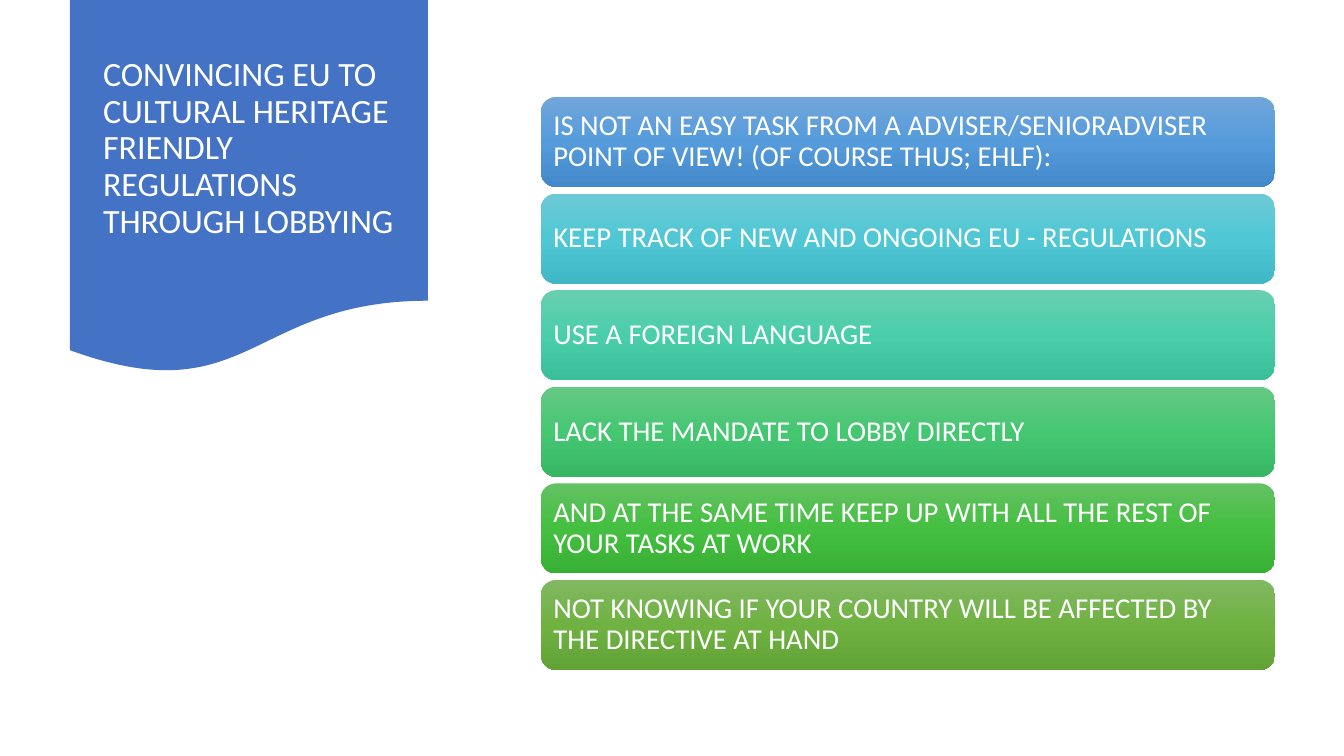
import copy

import pptx
import pptx.dml.color
import pptx.enum.shapes
import pptx.enum.text
import pptx.oxml.ns
import pptx.util

RGBColor = pptx.dml.color.RGBColor
SHAPES = pptx.enum.shapes.MSO_SHAPE

EMU_PER_PX = 914400 / 115
SLIDE_WIDTH, SLIDE_HEIGHT = 1344, 756
FONT = "Calibri"
WHITE = RGBColor(0xFF, 0xFF, 0xFF)
BANNER_BLUE = RGBColor(0x44, 0x72, 0xC4)

TITLE = "CONVINCING EU TO CULTURAL HERITAGE FRIENDLY REGULATIONS THROUGH LOBBYING"

# Text of each bar with its top, middle and bottom colours
CHALLENGES = [
    ("IS NOT AN EASY TASK FROM A ADVISER/SENIORADVISER POINT OF VIEW! (OF COURSE THUS; EHLF):",
     (RGBColor(0x71, 0xA6, 0xDB), RGBColor(0x55, 0x9B, 0xDB), RGBColor(0x44, 0x8A, 0xCA))),
    ("KEEP TRACK OF NEW AND ONGOING EU - REGULATIONS",
     (RGBColor(0x6D, 0xCA, 0xD5), RGBColor(0x4F, 0xC7, 0xD5), RGBColor(0x3F, 0xB7, 0xC4))),
    ("USE A FOREIGN LANGUAGE",
     (RGBColor(0x69, 0xCF, 0xB1), RGBColor(0x4A, 0xCE, 0xAA), RGBColor(0x3B, 0xBE, 0x9A))),
    ("LACK THE MANDATE TO LOBBY DIRECTLY",
     (RGBColor(0x66, 0xC8, 0x85), RGBColor(0x45, 0xC7, 0x72), RGBColor(0x37, 0xB7, 0x64))),
    ("AND AT THE SAME TIME KEEP UP WITH ALL THE REST OF YOUR TASKS AT WORK",
     (RGBColor(0x64, 0xC1, 0x62), RGBColor(0x44, 0xBF, 0x41), RGBColor(0x37, 0xB0, 0x34))),
    ("NOT KNOWING IF YOUR COUNTRY WILL BE AFFECTED BY THE DIRECTIVE AT HAND",
     (RGBColor(0x81, 0xB8, 0x61), RGBColor(0x6F, 0xB2, 0x42), RGBColor(0x62, 0xA3, 0x36))),
]


def px(length):
    return pptx.util.Emu(round(length * EMU_PER_PX))


def add_text_shape(slide, preset, box, text, size, insets):
    """Add an outline-free shape with left-aligned white text; insets are left, top, right, bottom."""
    shape = slide.shapes.add_shape(preset, *map(px, box))
    shape.shadow.inherit = False
    shape.line.fill.background()
    frame = shape.text_frame
    frame.word_wrap = True
    frame.vertical_anchor = pptx.enum.text.MSO_ANCHOR.MIDDLE
    frame.margin_left, frame.margin_top, frame.margin_right, frame.margin_bottom = map(px, insets)
    paragraph = frame.paragraphs[0]
    paragraph.text = text
    paragraph.alignment = pptx.enum.text.PP_ALIGN.LEFT
    paragraph.line_spacing = 0.9
    paragraph.font.name = FONT
    paragraph.font.size = pptx.util.Pt(size)
    paragraph.font.color.rgb = WHITE
    return shape


def fill_downwards(shape, colours):
    """Fill the shape with a top-to-bottom gradient of three colours."""
    shape.fill.gradient()
    shape.fill.gradient_angle = 270
    stop_list = shape._element.spPr.find(".//" + pptx.oxml.ns.qn("a:gsLst"))
    stop_list.append(copy.deepcopy(stop_list[0]))
    for stop, position, colour in zip(shape.fill.gradient_stops, (0, 0.5, 1), colours):
        stop.position = position
        stop.color.rgb = colour


def add_title_banner(slide, box):
    banner = add_text_shape(slide, SHAPES.FLOWCHART_DOCUMENT, box, TITLE, 21.3, (33, 5, 33, 8))
    banner.fill.solid()
    banner.fill.fore_color.rgb = BANNER_BLUE


def add_challenge_bars(slide, box, bar_height=90):
    left, top, width, height = box
    pitch = (height - bar_height) / (len(CHALLENGES) - 1)
    for index, (text, colours) in enumerate(CHALLENGES):
        bar_box = (left, top + index * pitch, width, bar_height)
        bar = add_text_shape(slide, SHAPES.ROUNDED_RECTANGLE, bar_box, text, 18, (8, 8, 8, 8))
        fill_downwards(bar, colours)


def main():
    presentation = pptx.Presentation()
    presentation.slide_width = px(SLIDE_WIDTH)
    presentation.slide_height = px(SLIDE_HEIGHT)
    slide = presentation.slides.add_slide(presentation.slide_layouts[6])
    add_title_banner(slide, (70, 0, 358, 375))
    add_challenge_bars(slide, (541, 97, 734, 573))
    presentation.save("out.pptx")


if __name__ == "__main__":
    main()
